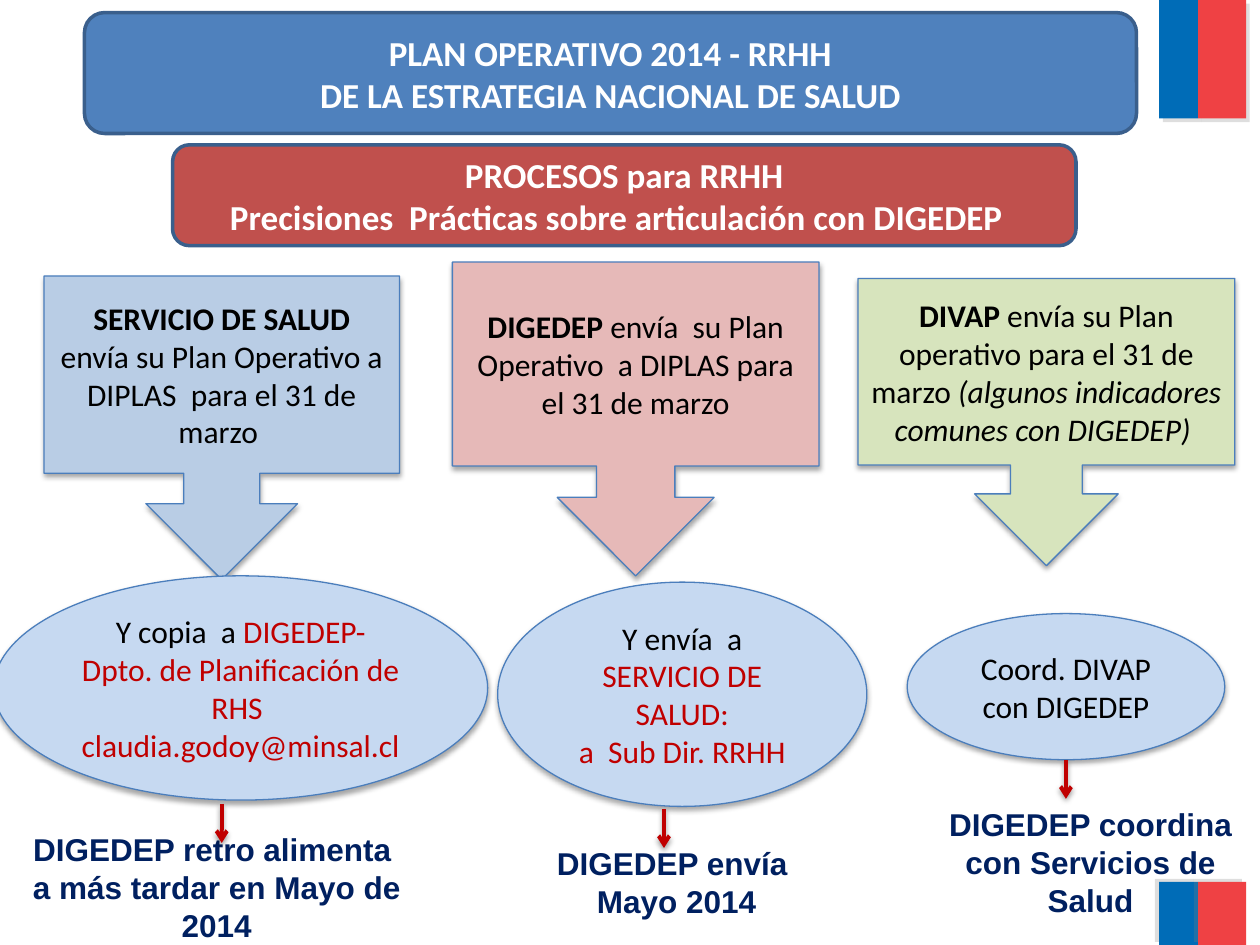
from lxml.etree import SubElement
from pptx import Presentation
from pptx.dml.color import RGBColor
from pptx.enum.shapes import MSO_CONNECTOR, MSO_SHAPE
from pptx.enum.text import MSO_ANCHOR, MSO_AUTO_SIZE, PP_ALIGN
from pptx.oxml.ns import qn
from pptx.util import Inches, Pt

BLACK, WHITE, RED, NAVY = "000000", "FFFFFF", "C00000", "002060"
BLUE_EDGE, OVAL_FILL = "4B7EBC", "C6D9F1"

# Shadows: colour, opacity %, blur pt, distance pt, direction in degrees
SOFT_SHADOW = (BLACK, 35, 3.1, 1.8, 90)
ARROW_SHADOW = (BLACK, 38, 3.1, 1.6, 90)

# Flag bands: left, width, colour; strips: top, height, shadow direction
FLAG_BANDS = [(9.2, 0.31, "006CB7"), (9.51, 0.38, "EF4144")]
FLAG_STRIPS = [(0, 0.94, 45), (7, 0.5, 215)]

# Text is a list of paragraphs; a paragraph is a list of (text, colour, style)
HEADINGS = [
    ((0.67, 0.1, 8.35, 0.96), "4F81BD",
     [[("PLAN OPERATIVO 2014 - RRHH", WHITE, "b")],
      [("DE LA ESTRATEGIA NACIONAL DE SALUD", WHITE, "b")]]),
    ((1.37, 1.15, 7.17, 0.8), "C0504D",
     [[("PROCESOS para RRHH", WHITE, "b")],
      [("Precisiones  Prácticas sobre articulación con DIGEDEP  ", WHITE, "b")]]),
]

COLUMNS = [
    {
        "plan_box": (0.35, 2.19, 2.82, 2.41),
        "plan_fill": "B9CDE5",
        "plan": [[("SERVICIO DE SALUD ", BLACK, "b"),
                  ("envía su Plan Operativo a DIPLAS  para el 31 de marzo ", BLACK, "")]],
        "contact_box": (-0.05, 4.57, 3.92, 1.78),
        "contact": [[("Y copia  a ", BLACK, ""),
                     ("DIGEDEP- Dpto. de Planificación de RHS ", RED, "")],
                    [("claudia.godoy@minsal.cl", RED, "")]],
        "arrow_start": (1.76, 6.38),
        "result_box": (-0.05, 6.54, 3.54, 1.01),
        "result": [[("DIGEDEP retro alimenta ", NAVY, "b")],
                   [("a más tardar en Mayo de 2014", NAVY, "b")]],
    },
    {
        "plan_box": (3.59, 2.08, 2.91, 2.49),
        "plan_fill": "E6B9B8",
        "plan": [[("DIGEDEP ", BLACK, "b"),
                  ("envía  su Plan Operativo  a DIPLAS para el 31 de marzo", BLACK, "")]],
        "contact_box": (3.95, 4.62, 2.93, 1.78),
        "contact": [[("Y envía  a ", BLACK, ""), ("SERVICIO DE SALUD:", RED, "")],
                    [("a  Sub Dir. RRHH", RED, "")]],
        "arrow_start": (5.27, 6.42),
        "result_box": (3.7, 6.65, 3.34, 0.71),
        "result": [[("DIGEDEP envía ", NAVY, "b")], [("Mayo 2014", NAVY, "b")]],
    },
    {
        "plan_box": (6.81, 2.21, 2.99, 2.28),
        "plan_fill": "D7E4BD",
        "plan": [[("DIVAP", BLACK, "b"),
                  (" envía su Plan operativo para el 31 de marzo ", BLACK, ""),
                  ("(algunos indicadores comunes con DIGEDEP) ", BLACK, "i")]],
        "contact_box": (7.2, 4.87, 2.52, 1.16),
        "contact": [[("Coord. DIVAP con DIGEDEP", BLACK, "")]],
        "arrow_start": (8.46, 6.03),
        "result_box": (7.2, 6.34, 2.91, 1.01),
        "result": [[("DIGEDEP coordina con Servicios de Salud", NAVY, "b")]],
    },
]
ARROW_LENGTH = 0.31


def rgb(hex_colour):
    return RGBColor.from_string(hex_colour)


def inches(values):
    return [Inches(value) for value in values]


def add_shadow(shape, shadow):
    """Give the shape an outer shadow, or an empty effect list for None."""
    effects = SubElement(shape._element.spPr, qn("a:effectLst"))
    if shadow is None:
        return
    colour, opacity, blur, distance, direction = shadow
    outer = SubElement(effects, qn("a:outerShdw"), blurRad=str(Pt(blur)),
                       dist=str(Pt(distance)), dir=str(direction * 60000),
                       rotWithShape="0")
    tint = SubElement(outer, qn("a:srgbClr"), val=colour)
    SubElement(tint, qn("a:alpha"), val=str(opacity * 1000))


def write(frame, paragraphs, size, font="Calibri"):
    frame.word_wrap = True
    for index, runs in enumerate(paragraphs):
        paragraph = frame.add_paragraph() if index else frame.paragraphs[0]
        paragraph.alignment = PP_ALIGN.CENTER
        for text, colour, style in runs:
            run = paragraph.add_run()
            run.text = text
            run.font.name = font
            run.font.size = Pt(size)
            run.font.bold = "b" in style
            run.font.italic = "i" in style
            run.font.color.rgb = rgb(colour)


def add_block(slide, kind, box, fill, edge=None, shadow=None, paragraphs=(), size=18):
    """Add a filled shape; edge is (colour, width in points)."""
    block = slide.shapes.add_shape(kind, *inches(box))
    block.fill.solid()
    block.fill.fore_color.rgb = rgb(fill)
    if edge:
        block.line.color.rgb = rgb(edge[0])
        block.line.width = Pt(edge[1])
    else:
        block.line.fill.background()
    add_shadow(block, shadow)
    block.text_frame.vertical_anchor = MSO_ANCHOR.MIDDLE
    write(block.text_frame, paragraphs, size)


def add_down_arrow(slide, x, y):
    arrow = slide.shapes.add_connector(
        MSO_CONNECTOR.STRAIGHT, *inches((x, y, x, y + ARROW_LENGTH)))
    arrow.line.color.rgb = rgb(RED)
    arrow.line.width = Pt(2.25)
    SubElement(arrow.line._get_or_add_ln(), qn("a:tailEnd"), type="arrow")
    add_shadow(arrow, ARROW_SHADOW)


def add_result(slide, box, paragraphs):
    frame = slide.shapes.add_textbox(*inches(box)).text_frame
    write(frame, paragraphs, 18, "Arial")
    frame.auto_size = MSO_AUTO_SIZE.SHAPE_TO_FIT_TEXT


def main():
    prs = Presentation()
    prs.slide_width, prs.slide_height = inches((10, 7.5))
    slide = prs.slides.add_slide(prs.slide_layouts[6])

    for top, height, direction in FLAG_STRIPS:
        for left, width, colour in FLAG_BANDS:
            add_block(slide, MSO_SHAPE.RECTANGLE, (left, top, width, height), colour,
                      shadow=("808080", 25, 0, 3, direction))

    for box, fill, heading in HEADINGS:
        add_block(slide, MSO_SHAPE.ROUNDED_RECTANGLE, box, fill, ("3A5F8C", 2),
                  paragraphs=heading, size=20)

    edge = (BLUE_EDGE, 0.75)
    for column in COLUMNS:
        add_block(slide, MSO_SHAPE.DOWN_ARROW_CALLOUT, column["plan_box"],
                  column["plan_fill"], edge, SOFT_SHADOW, column["plan"])
        add_block(slide, MSO_SHAPE.OVAL, column["contact_box"],
                  OVAL_FILL, edge, SOFT_SHADOW, column["contact"])
        add_result(slide, column["result_box"], column["result"])
        add_down_arrow(slide, *column["arrow_start"])

    prs.save("out.pptx")


if __name__ == "__main__":
    main()
